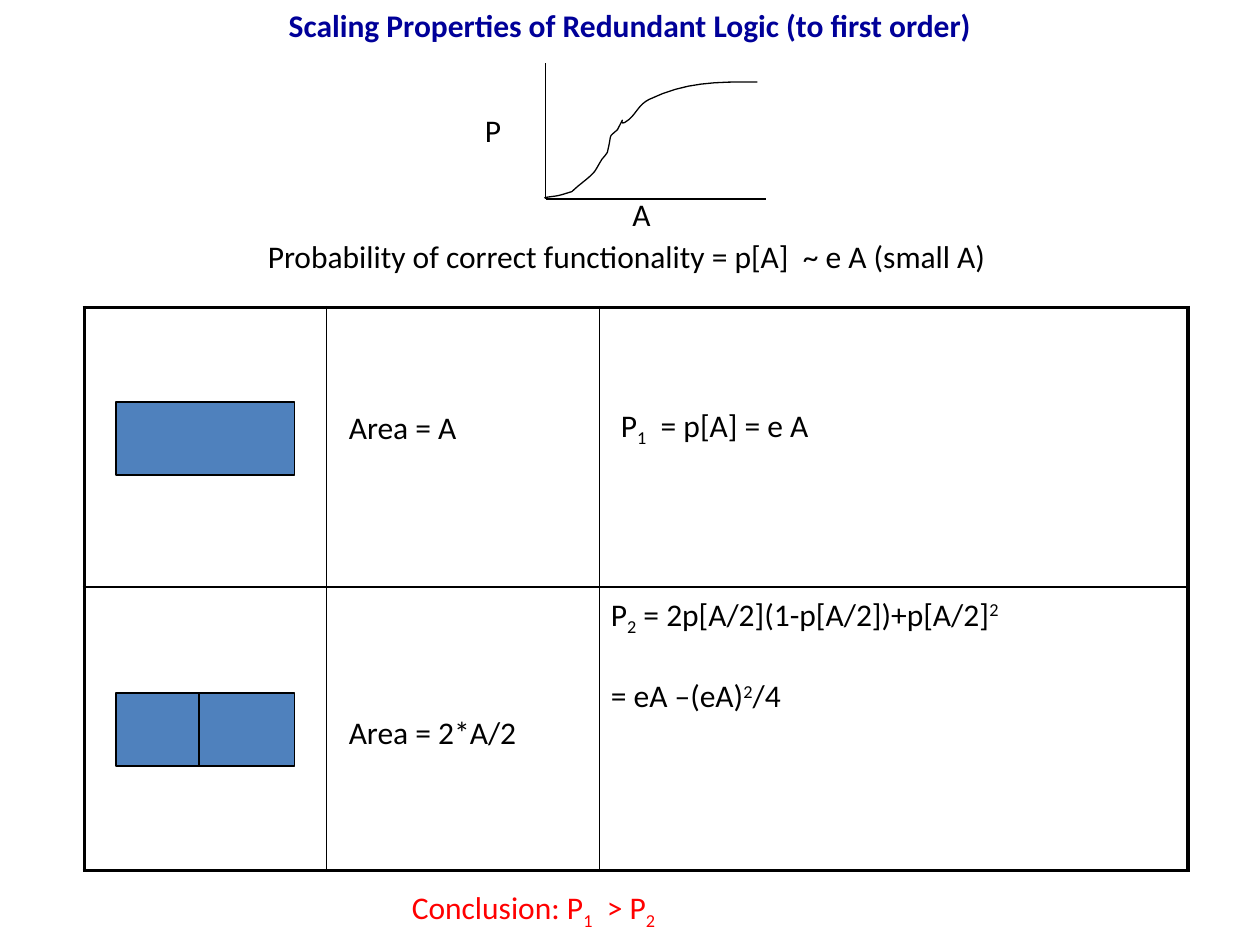
from dataclasses import dataclass

from lxml import etree
from pptx import Presentation
from pptx.dml.color import RGBColor
from pptx.enum.shapes import MSO_CONNECTOR, MSO_SHAPE
from pptx.enum.text import MSO_ANCHOR, MSO_AUTO_SIZE, PP_ALIGN
from pptx.oxml.ns import qn
from pptx.util import Inches, Pt

STRAIGHT = MSO_CONNECTOR.STRAIGHT
RECTANGLE = MSO_SHAPE.RECTANGLE
TOP = MSO_ANCHOR.TOP
NO_AUTOFIT = MSO_AUTO_SIZE.NONE
LEFT, CENTER = PP_ALIGN.LEFT, PP_ALIGN.CENTER

COLORS = {"title": "000099", "text": "000000", "line": "000000",
          "block": "4F81BD", "conclusion": "FF0000"}
SUBSCRIPT, NORMAL, SUPERSCRIPT = -25, 0, 30
THIN, INNER, OUTER = 0.75, 1, 2.25
BLOCK_WIDTH, BLOCK_HEIGHT = 1.42, 0.58
BLOCK_LEFT, BLOCK_TOPS, SPLIT_X = 0.92, (3.19, 5.5), 1.58
COLUMN_WIDTHS, ROW_HEIGHTS = (1.92, 2.17, 4.67), (2.22, 2.25)
CURVE_START = (4.32, 1.57)
CURVE_SEGMENTS = [  # two control points and an end point each
    ((4.36, 1.56), (4.4, 1.56), (4.44, 1.55)),
    ((4.48, 1.54), (4.54, 1.52), (4.54, 1.52)),
    ((4.6, 1.46), (4.67, 1.42), (4.72, 1.36)),
    ((4.74, 1.33), (4.76, 1.29), (4.78, 1.26)),
    ((4.8, 1.24), (4.82, 1.21), (4.82, 1.21)),
    ((4.86, 1.05), (4.82, 1.1), (4.9, 1.03)),
    ((4.99, 0.86), (4.88, 1.04), (4.99, 0.95)),
    ((5.05, 0.9), (5.07, 0.83), (5.15, 0.79)),
    ((5.44, 0.65), (5.68, 0.65), (6.01, 0.65)),
]


@dataclass
class Label:
    left: float
    top: float
    width: float
    height: float
    paragraphs: list  # each a list of (text, baseline percent)
    color: str = "text"
    align: PP_ALIGN = LEFT
    wrap: bool = False


@dataclass
class Line:
    start: tuple
    end: tuple


LABELS = [
    Label(2.67, 3.19, 1.51, 0.5, [[("Area = A", NORMAL)]]),
    Label(2.67, 5.61, 2.1, 0.5, [[("Area = 2*A/2", NORMAL)]]),
    Label(0.08, 1.83, 9.79, 0.5,
          [[("Probability of correct functionality = p[A]  ~ e A (small A)", NORMAL)]],
          align=CENTER, wrap=True),
    Label(4.83, 3.17, 2.49, 0.5,
          [[("P", NORMAL), ("1", SUBSCRIPT), ("  = p[A] = e A", NORMAL)]]),
    Label(3.75, 0.83, 0.42, 0.5, [[("P", NORMAL)]]),
    Label(4.92, 1.5, 0.42, 0.5, [[("A", NORMAL)]]),
    Label(4.75, 4.67, 4.56, 1.97,
          [[("P", NORMAL), ("2", SUBSCRIPT), (" = 2p[A/2](1-p[A/2])+p[A/2]", NORMAL),
            ("2", SUPERSCRIPT)],
           [("= eA –(eA)", NORMAL), ("2", SUPERSCRIPT), ("/4", NORMAL)]]),
    Label(3.17, 7, 3.2, 0.5,
          [[("Conclusion: P", NORMAL), ("1", SUBSCRIPT), ("  > P", NORMAL),
            ("2", SUBSCRIPT)]], color="conclusion"),
]
LINES = [
    Line((SPLIT_X, BLOCK_TOPS[1]), (SPLIT_X, BLOCK_TOPS[1] + BLOCK_HEIGHT)),
    Line((4.33, 0.5), (4.33, 1.58)),
    Line((4.33, 1.58), (6.08, 1.58)),
]


def rgb(name: str) -> RGBColor:
    return RGBColor.from_string(COLORS[name])


def format_font(font, color: str, bold: bool = False) -> None:
    for name, value in {"name": "Calibri", "size": Pt(18), "bold": bold}.items():
        setattr(font, name, value)
    font.color.rgb = rgb(color)


def format_line(line) -> None:
    line.color.rgb = rgb("line")
    line.width = Pt(THIN)


def add_title(slide, text: str) -> None:
    title = slide.shapes.title
    box = {"left": 0, "top": 0, "width": Inches(10), "height": Inches(0.5)}
    for name, value in box.items():
        setattr(title, name, value)
    frame = title.text_frame
    frame.auto_size, frame.vertical_anchor = NO_AUTOFIT, TOP
    paragraph = frame.paragraphs[0]
    paragraph.alignment = CENTER
    run = paragraph.add_run()
    run.text = text
    format_font(run.font, "title", bold=True)


def add_label(slide, label: Label) -> None:
    box = slide.shapes.add_textbox(Inches(label.left), Inches(label.top),
                                   Inches(label.width), Inches(label.height))
    frame = box.text_frame
    frame.word_wrap = label.wrap
    for index, pieces in enumerate(label.paragraphs):
        paragraph = frame.add_paragraph() if index else frame.paragraphs[0]
        paragraph.alignment = label.align
        if index:
            paragraph.space_before = Pt(22)
        for text, baseline in pieces:
            run = paragraph.add_run()
            run.text = text
            format_font(run.font, label.color)
            if baseline:
                run._r.get_or_add_rPr().set("baseline", str(baseline * 1000))


def add_block(slide, top: float) -> None:
    block = slide.shapes.add_shape(RECTANGLE, Inches(BLOCK_LEFT), Inches(top),
                                   Inches(BLOCK_WIDTH), Inches(BLOCK_HEIGHT))
    block.shadow.inherit = False
    block.fill.solid()
    block.fill.fore_color.rgb = rgb("block")
    format_line(block.line)


def add_line(slide, line: Line) -> None:
    points = [Inches(value) for value in (*line.start, *line.end)]
    connector = slide.shapes.add_connector(STRAIGHT, *points)
    format_line(connector.line)
    etree.SubElement(connector._element.spPr, qn("a:effectLst"))


def add_curve(slide, steps: int = 8) -> None:
    """Draw the cubic segments as short straight pieces."""
    points, start = [], CURVE_START
    for first, second, end in CURVE_SEGMENTS:
        for step in range(1, steps + 1):
            t = step / steps
            weights = ((1 - t) ** 3, 3 * t * (1 - t) ** 2, 3 * t * t * (1 - t), t ** 3)
            corners = (start, first, second, end)
            points.append(tuple(Inches(sum(w * c[axis] for w, c in zip(weights, corners)))
                                for axis in (0, 1)))
        start = end
    builder = slide.shapes.build_freeform(*map(Inches, CURVE_START))
    builder.add_line_segments(points, close=False)
    curve = builder.convert_to_shape()
    curve.shadow.inherit = False
    curve.fill.background()
    format_line(curve.line)


def set_border(cell, side: str, width: float) -> None:
    border = etree.SubElement(cell._tc.get_or_add_tcPr(), qn(f"a:ln{side}"),
                              w=str(Pt(width)))
    fill = etree.SubElement(border, qn("a:solidFill"))
    etree.SubElement(fill, qn("a:srgbClr"), val=COLORS["line"])


def add_grid(slide) -> None:
    rows, columns = len(ROW_HEIGHTS), len(COLUMN_WIDTHS)
    table = slide.shapes.add_table(rows, columns, Inches(0.67), Inches(2.44),
                                   Inches(sum(COLUMN_WIDTHS)),
                                   Inches(sum(ROW_HEIGHTS))).table
    table.first_row = table.horz_banding = False
    for column, width in zip(table.columns, COLUMN_WIDTHS):
        column.width = Inches(width)
    for r, height in enumerate(ROW_HEIGHTS):
        table.rows[r].height = Inches(height)
        for c in range(columns):
            cell = table.cell(r, c)
            on_edge = {"L": c == 0, "R": c == columns - 1, "T": r == 0, "B": r == rows - 1}
            for side, outer in on_edge.items():
                set_border(cell, side, OUTER if outer else INNER)
            cell.fill.background()


def main() -> None:
    presentation = Presentation()
    presentation.slide_width, presentation.slide_height = Inches(10), Inches(7.5)
    slide = presentation.slides.add_slide(presentation.slide_layouts[5])
    add_title(slide, "Scaling Properties of Redundant Logic (to first order)")
    for top in BLOCK_TOPS:
        add_block(slide, top)
    add_grid(slide)
    for line in LINES:
        add_line(slide, line)
    add_curve(slide)
    for label in LABELS:
        add_label(slide, label)
    presentation.save("out.pptx")


if __name__ == "__main__":
    main()
